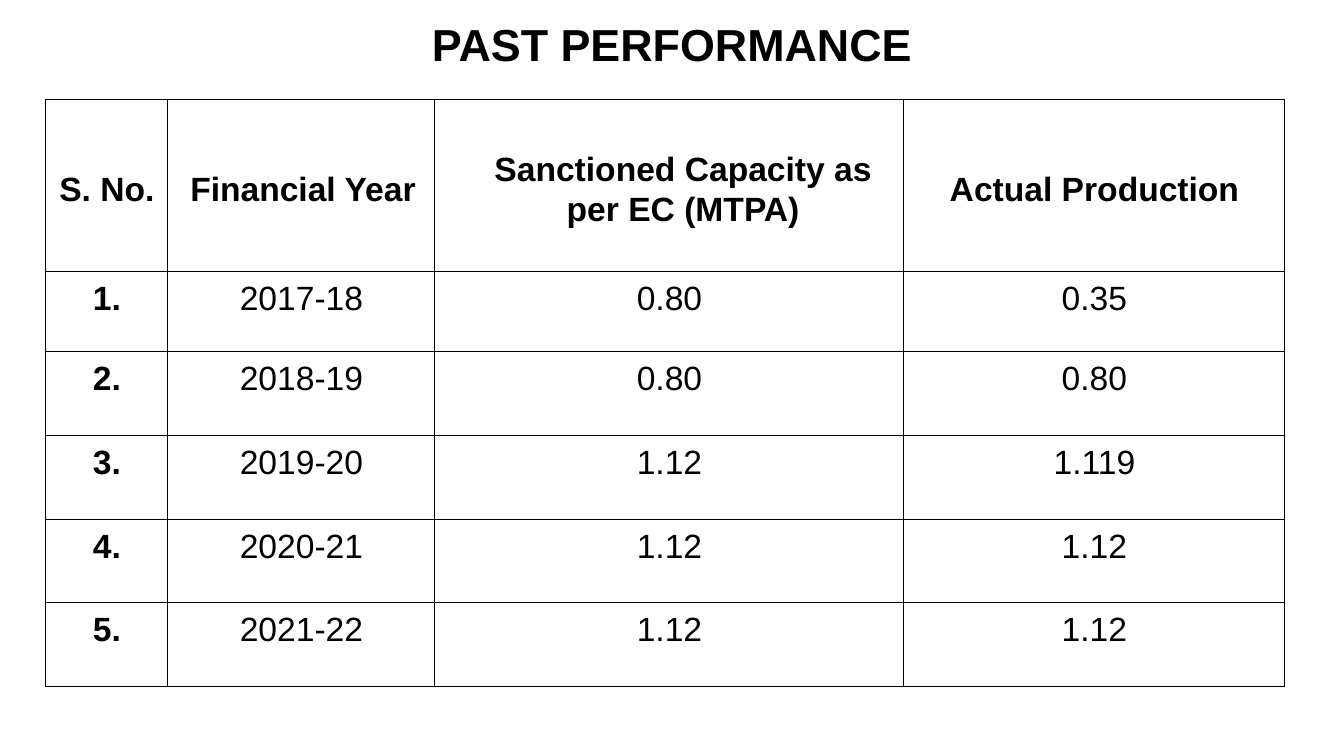
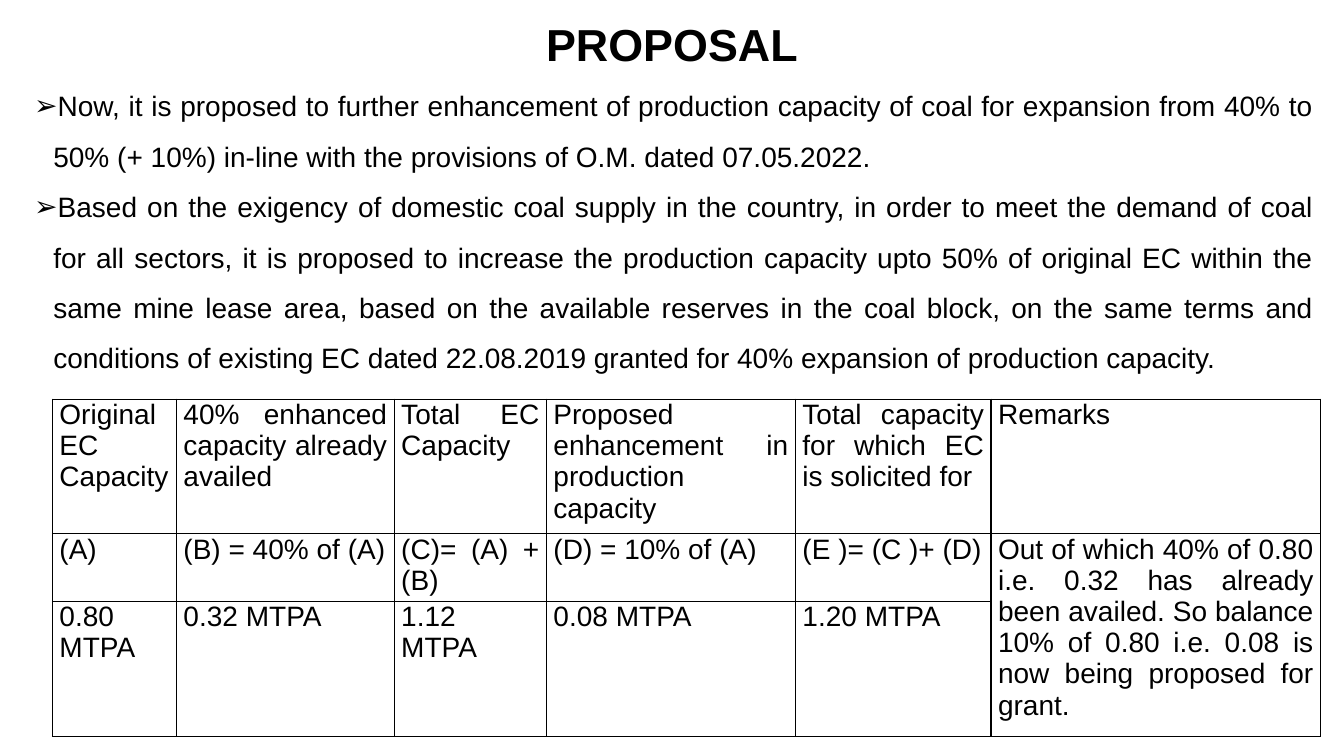
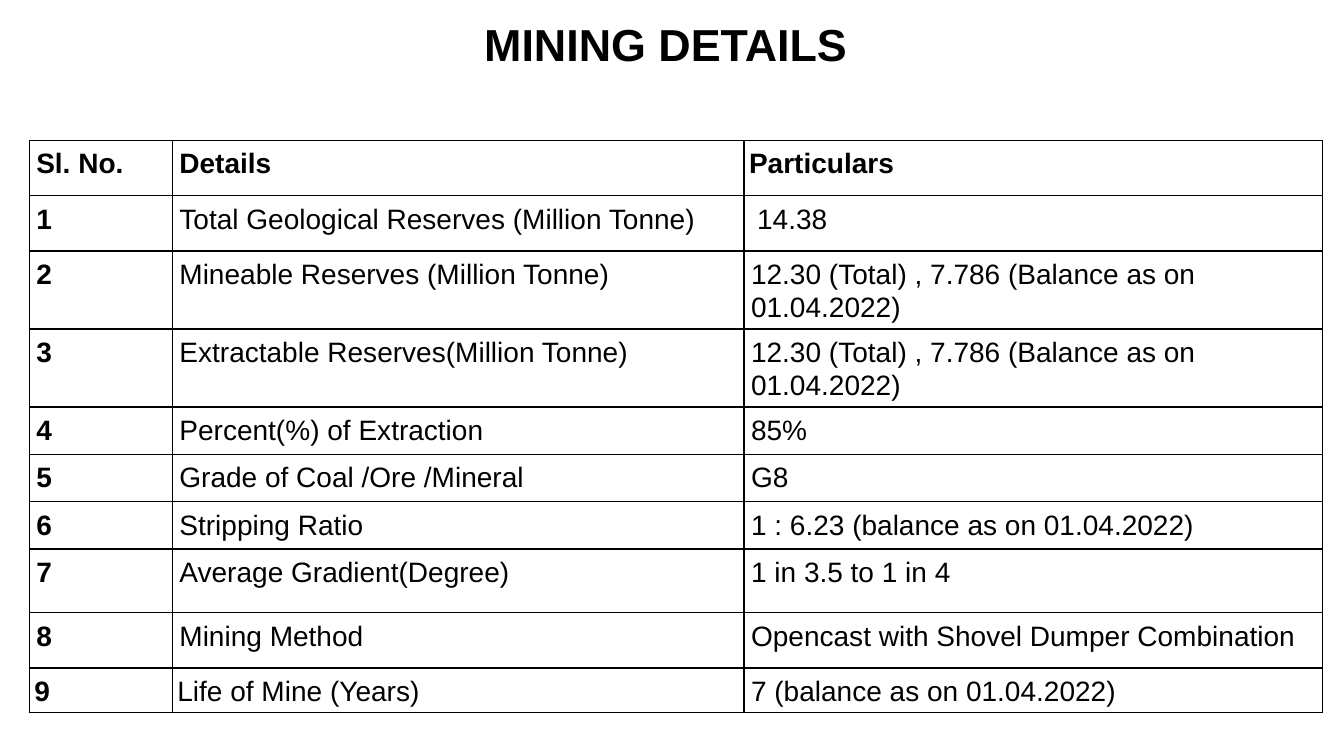
from dataclasses import dataclass, field

from lxml.etree import SubElement
from pptx import Presentation
from pptx.dml.color import RGBColor
from pptx.enum.text import MSO_ANCHOR, MSO_AUTO_SIZE, PP_ALIGN
from pptx.oxml import parse_xml
from pptx.oxml.ns import nsdecls, qn
from pptx.util import Inches, Pt

BLACK = RGBColor(0, 0, 0)
FONT = "Arial"
WIDE, HIGH = 13.33, 7.5
EDGE = 0.22
SPAN = WIDE - 2 * EDGE
LINE = Pt(1)


@dataclass
class Look:
    """How the cells of one table are set."""
    size: int
    pad: tuple
    align: PP_ALIGN
    lead: float = 1.0
    after: float = 0
    indent: float = 0
    shifts: dict = field(default_factory=dict)
    bold_head: bool = True
    mid_head: bool = False


def style(par, size, bold=False, align=PP_ALIGN.LEFT, lead=1.0):
    par.alignment = align
    par.line_spacing = lead
    font = par.font
    font.name, font.size, font.bold = FONT, Pt(size), bold
    font.color.rgb = BLACK


def add_box(slide, left, top, width, height):
    box = slide.shapes.add_textbox(*map(Inches, (left, top, width, height)))
    frame = box.text_frame
    frame.word_wrap = True
    frame.vertical_anchor = MSO_ANCHOR.MIDDLE
    return frame


def add_page(deck, title):
    slide = deck.slides.add_slide(deck.slide_layouts[6])
    par = add_box(slide, EDGE, -0.03, SPAN, 0.92).paragraphs[0]
    par.text = title
    style(par, 32, True, PP_ALIGN.CENTER)
    return slide


def add_points(slide, top, height, points):
    frame = add_box(slide, 0.24, top, SPAN, height)
    frame.auto_size = MSO_AUTO_SIZE.SHAPE_TO_FIT_TEXT
    for i, text in enumerate(points):
        par = frame.add_paragraph() if i else frame.paragraphs[0]
        par.text = text
        props = par._p.get_or_add_pPr()
        props.set("marL", str(Inches(0.19)))
        props.set("indent", str(-Inches(0.19)))
        SubElement(props, qn("a:buFont")).set("typeface", FONT)
        SubElement(props, qn("a:buChar")).set("char", "➢")
        style(par, 20, align=PP_ALIGN.JUSTIFY, lead=1.5)


def draw_edges(cell):
    """Rule all four sides; the lines must precede the fill."""
    cell.fill.background()
    props = cell._tc.get_or_add_tcPr()
    for i, side in enumerate("LRTB"):
        props.insert(i, parse_xml(
            f'<a:ln{side} {nsdecls("a")} w="{LINE}"><a:solidFill>'
            f'<a:srgbClr val="{BLACK}"/></a:solidFill></a:ln{side}>'))


def fill_cell(cell, text, look, row, col):
    (cell.margin_left, cell.margin_top, cell.margin_right,
     cell.margin_bottom) = map(Inches, look.pad)
    head = row == 0
    middle = head and look.mid_head
    cell.vertical_anchor = MSO_ANCHOR.MIDDLE if middle else MSO_ANCHOR.TOP
    par = cell.text_frame.paragraphs[0]
    par.text = text
    indent = look.shifts.get((row, col), look.indent)
    par._p.get_or_add_pPr().set("marL", str(Inches(indent)))
    bold = look.bold_head and (head or col == 0)
    style(par, look.size, bold, look.align, look.lead)
    par.space_after = Pt(look.after)


def add_grid(slide, left, top, cols, rows, cells, look):
    frame = slide.shapes.add_table(
        len(rows), len(cols),
        *map(Inches, (left, top, sum(cols), sum(rows))))
    table = frame.table
    table.first_row = table.horz_banding = False
    for col, width in zip(table.columns, cols):
        col.width = Inches(width)
    for row, height in zip(table.rows, rows):
        row.height = Inches(height)
    for r in range(len(rows)):
        for c in range(len(cols)):
            cell = table.cell(r, c)
            draw_edges(cell)
            if c < len(cells[r]):
                fill_cell(cell, cells[r][c], look, r, c)
    return table


def add_past(deck):
    slide = add_page(deck, "PAST PERFORMANCE")
    years = [("2017-18", "0.80", "0.35"), ("2018-19", "0.80", "0.80"),
             ("2019-20", "1.12", "1.119"), ("2020-21", "1.12", "1.12"),
             ("2021-22", "1.12", "1.12")]
    cells = [("S. No.", "Financial Year",
              "Sanctioned Capacity as per EC (MTPA)", "Actual Production")]
    cells += [(f"{n}.", *year) for n, year in enumerate(years, 1)]
    look = Look(24, (0.03, 0.06, 0.05, 0), PP_ALIGN.CENTER, 1.07,
                indent=0.03, shifts={(0, 1): 0.06, (0, 2): 0.3},
                mid_head=True)
    add_grid(slide, 0.45, 0.99, [1.21, 2.65, 4.65, 3.78],
             [1.7, 0.8] + [0.83] * 4, cells, look)


def add_plan(deck):
    slide = add_page(deck, "PROPOSAL")
    add_points(slide, 0.68, 3.07, [
        "Now, it is proposed to further enhancement of production capacity "
        "of coal for expansion from 40% to 50% (+ 10%) in-line with the "
        "provisions of O.M. dated 07.05.2022.",
        "Based on the exigency of domestic coal supply in the country, in "
        "order to meet the demand of coal for all sectors, it is proposed to "
        "increase the production capacity upto 50% of original EC within the "
        "same mine lease area, based on the available reserves in the coal "
        "block, on the same terms and conditions of existing EC dated "
        "22.08.2019 granted for 40% expansion of production capacity."])
    cells = [
        ("Original EC Capacity", "40% enhanced capacity already availed",
         "Total EC Capacity", "Proposed enhancement in production capacity",
         "Total capacity for which EC is solicited for", "Remarks"),
        ("(A)", "(B) = 40% of (A)", "(C)= (A) + (B)", "(D) = 10% of (A)",
         "(E )= (C )+ (D)",
         "Out of which 40% of 0.80 i.e. 0.32 has already been availed. So "
         "balance 10% of 0.80 i.e. 0.08 is now being proposed for grant."),
        [f"{mass} MTPA" for mass in ("0.80", "0.32", "1.12", "0.08", "1.20")]]
    look = Look(20, (0.07, 0, 0.07, 0), PP_ALIGN.JUSTIFY, after=12,
                bold_head=False)
    table = add_grid(slide, 0.52, 3.96, [1.23, 2.16, 1.51, 2.47, 1.94, 3.27],
                     [1.32, 0.67, 1.34], cells, look)
    table.cell(1, 5).merge(table.cell(2, 5))


def add_mine(deck):
    slide = add_page(deck, "MINING DETAILS ")
    stock = "12.30 (Total) , 7.786 (Balance as on 01.04.2022)"
    facts = [
        ("Total Geological Reserves (Million Tonne)", "14.38"),
        ("Mineable Reserves (Million Tonne)", stock),
        ("Extractable Reserves(Million Tonne)", stock),
        ("Percent(%) of Extraction", "85%"),
        ("Grade of Coal /Ore /Mineral", "G8"),
        ("Stripping Ratio", "1 : 6.23 (balance as on 01.04.2022)"),
        ("Average Gradient(Degree)", "1 in 3.5 to 1 in 4"),
        ("Mining Method", "Opencast with Shovel Dumper Combination"),
        ("Life of Mine (Years)", "7 (balance as on 01.04.2022)")]
    cells = [("Sl. No.", "Details", "Particulars")]
    cells += [(str(n), *fact) for n, fact in enumerate(facts, 1)]
    look = Look(20, (0.04, 0.06, 0.06, 0), PP_ALIGN.LEFT, 1.07, 1.7, 0.03,
                {(0, 2): 0.01, (1, 2): 0.09, (9, 0): 0.01, (9, 1): 0.01})
    rows = [0.55] * 2 + [0.77] * 2 + [0.47] * 3 + [0.63, 0.55, 0.44]
    add_grid(slide, 0.29, 1.39, [1.42, 5.67, 5.74], rows, cells, look)


def main():
    deck = Presentation()
    deck.slide_width, deck.slide_height = Inches(WIDE), Inches(HIGH)
    add_past(deck)
    add_plan(deck)
    add_mine(deck)
    deck.save("out.pptx")


if __name__ == "__main__":
    main()
